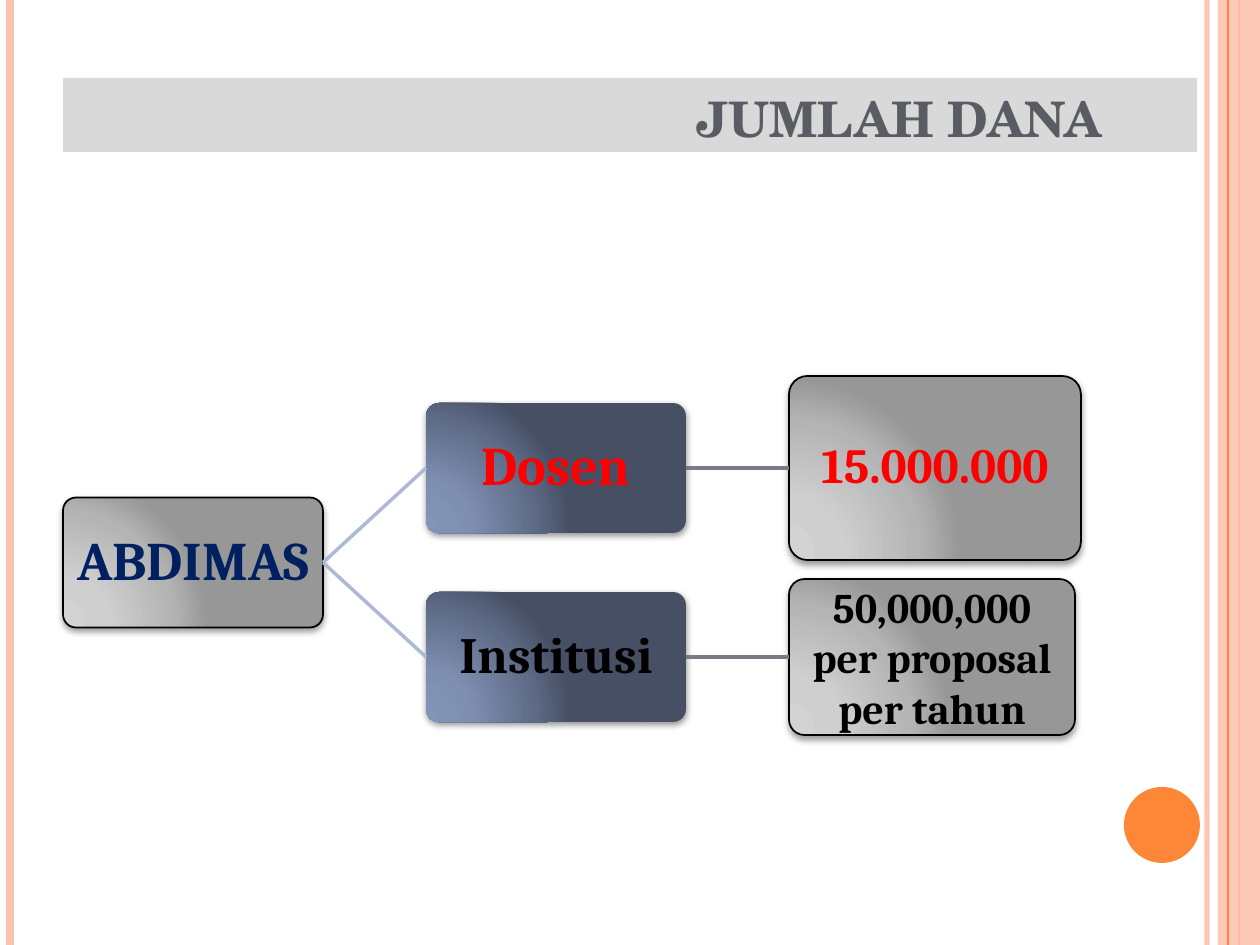
from dataclasses import dataclass

from lxml.etree import SubElement
from pptx import Presentation
from pptx.dml.color import RGBColor
from pptx.enum.shapes import MSO_CONNECTOR, MSO_SHAPE as Shape
from pptx.enum.text import MSO_ANCHOR as Anchor, PP_ALIGN as Align
from pptx.oxml import parse_xml
from pptx.oxml.ns import nsdecls, qn
from pptx.util import Emu, Pt

SCALE = 914400 / 126
RIGHT_SIDE, LEFT_SIDE = 3, 1


@dataclass(frozen=True)
class Theme:
    title_font: str = "TeX Gyre Schola"
    body_font: str = "Cambria"
    title_size: int = 28
    category_size: int = 31
    institution_size: int = 29
    amount_size: int = 28
    terms_size: int = 24
    title_text: str = "595D63"
    title_band: str = "D9D9D9"
    peach: str = "FEC3AE"
    orange: str = "FE8637"
    navy: str = "002060"
    red: str = "FF0000"
    black: str = "000000"
    branch: str = "AEBAD5"
    link: str = "777C84"
    gray_stops: tuple = ("D3D3D3", "CFCFCF", "B4B4B4", "979797")
    blue_stops: tuple = ("8494B9", "7F8FB2", "5E6B87", "464F64")


THEME = Theme()


def px(length):
    return Emu(round(length * SCALE))


def rgb(color):
    return RGBColor.from_string(color)


def set_opacity(part, percent):
    for color in part._element.spPr.iter(qn("a:srgbClr")):
        SubElement(color, qn("a:alpha"), val=str(percent * 1000))


def add_line(slide, start, end, color, width):
    line = slide.shapes.add_connector(MSO_CONNECTOR.STRAIGHT, *map(px, start + end))
    line.line.color.rgb = rgb(color)
    line.line.width = Pt(width)
    SubElement(line._element.spPr, qn("a:effectLst"))
    return line


def add_plain_shape(slide, kind, box, color):
    shape = slide.shapes.add_shape(kind, *map(px, box))
    shape.shadow.inherit = False
    shape.fill.solid()
    shape.fill.fore_color.rgb = rgb(color)
    shape.line.fill.background()
    return shape


def write(frame, lines, font, size, color, align):
    for number, text in enumerate(lines):
        paragraph = frame.paragraphs[0] if number == 0 else frame.add_paragraph()
        paragraph.alignment = align
        run = paragraph.add_run()
        run.text = text
        run.font.name, run.font.size, run.font.bold = font, Pt(size), True
        run.font.color.rgb = rgb(color)


def add_frame_decor(slide, box):
    """Draw the side rails, the right band and the corner disc."""
    left, top, width, height = box

    def rail(x, color, weight):
        return add_line(slide, (left + x, top), (left + x, top + height), color, weight)

    set_opacity(rail(1207, THEME.peach, 3), 93)
    rail(10, THEME.peach, 4.5)
    rail(1239, THEME.orange, 1.5)
    band = add_plain_shape(slide, Shape.RECTANGLE,
                           (left + 1218, top, width - 1218, height), THEME.peach)
    set_opacity(band, 87)
    rail(1228, THEME.orange, 0.75)
    add_plain_shape(slide, Shape.OVAL, (left + 1124, top + 787, 76, 76), THEME.orange)


def add_title(slide, box):
    title = slide.shapes.title
    title.left, title.top, title.width, title.height = map(px, box)
    title.fill.solid()
    title.fill.fore_color.rgb = rgb(THEME.title_band)
    frame = title.text_frame
    frame.vertical_anchor = Anchor.BOTTOM
    frame.margin_top = frame.margin_bottom = px(5)
    frame.margin_right = px(95)
    write(frame, ["JUMLAH DANA"], THEME.title_font, THEME.title_size,
          THEME.title_text, Align.RIGHT)


def shade(node, stops, shadow_alpha, shadow_distance):
    """Give a node its circular gradient and soft drop shadow."""
    marks = "".join(
        f'<a:gs pos="{position * 1000}"><a:srgbClr val="{color}"/></a:gs>'
        for position, color in zip((0, 30, 75, 100), stops))
    properties = node._element.spPr
    properties.find(qn("a:prstGeom")).addnext(parse_xml(
        f'<a:gradFill {nsdecls("a")} rotWithShape="1"><a:gsLst>{marks}</a:gsLst>'
        '<a:path path="circle"><a:fillToRect l="5000" t="100000" r="120000" b="10000"/>'
        '</a:path></a:gradFill>'))
    node.shadow.inherit = False
    properties.find(qn("a:effectLst")).append(parse_xml(
        f'<a:outerShdw {nsdecls("a")} blurRad="{Pt(4)}" dist="{Pt(shadow_distance)}" '
        f'dir="5400000" rotWithShape="0"><a:srgbClr val="{THEME.black}">'
        f'<a:alpha val="{shadow_alpha * 1000}"/></a:srgbClr></a:outerShdw>'))


def add_node(slide, left, middle, size, lines, font_size, color, blue=False):
    """Add a rounded box centred vertically on middle."""
    width, height = size
    node = slide.shapes.add_shape(
        Shape.ROUNDED_RECTANGLE,
        *map(px, (left, middle - height / 2, width, height)))
    node.adjustments[0] = 0.1
    if blue:
        node.line.fill.background()
        shade(node, THEME.blue_stops, 42, 1.6)
    else:
        node.line.color.rgb = rgb(THEME.black)
        node.line.width = Pt(1)
        shade(node, THEME.gray_stops, 40, 2)
    frame = node.text_frame
    frame.word_wrap = True
    frame.vertical_anchor = Anchor.MIDDLE
    frame.margin_left = frame.margin_right = px(5)
    frame.margin_top = frame.margin_bottom = px(5)
    write(frame, lines, THEME.body_font, font_size, color, Align.CENTER)
    if len(lines) == 1:
        frame.paragraphs[0].line_spacing = 0.9
    return node


def join(slide, source, target, color):
    line = add_line(slide, (0, 0), (0, 0), color, 2)
    line.begin_connect(source, RIGHT_SIDE)
    line.end_connect(target, LEFT_SIDE)


def add_funding_tree(slide, box):
    left, top, _, height = box
    column_step, row_step, node_size = 363, 189, (260, 130)
    first_row = top + 92
    root = add_node(slide, left, first_row + row_step / 2, node_size,
                    ["ABDIMAS"], THEME.category_size, THEME.navy)
    branches = [
        ("Dosen", THEME.category_size, THEME.red,
         (292, 184), ["15.000.000"], THEME.amount_size),
        ("Institusi", THEME.institution_size, THEME.black,
         (286, 156), ["50,000,000", "per proposal", "per tahun"], THEME.terms_size),
    ]
    for row, (name, name_size, color, fund_box, fund, fund_size) in enumerate(branches):
        middle = first_row + row * row_step
        recipient = add_node(slide, left + column_step, middle, node_size,
                             [name], name_size, color, blue=True)
        amount = add_node(slide, left + 2 * column_step, middle, fund_box,
                          fund, fund_size, color)
        join(slide, root, recipient, THEME.branch)
        join(slide, recipient, amount, THEME.link)


def main():
    deck = Presentation()
    deck.slide_width, deck.slide_height = px(1260), px(945)
    slide = deck.slides.add_slide(deck.slide_layouts[5])
    add_frame_decor(slide, (0, 0, 1260, 945))
    add_title(slide, (63, 78, 1134, 74))
    add_funding_tree(slide, (63, 376, 1018, 360))
    deck.save("out.pptx")


if __name__ == "__main__":
    main()
